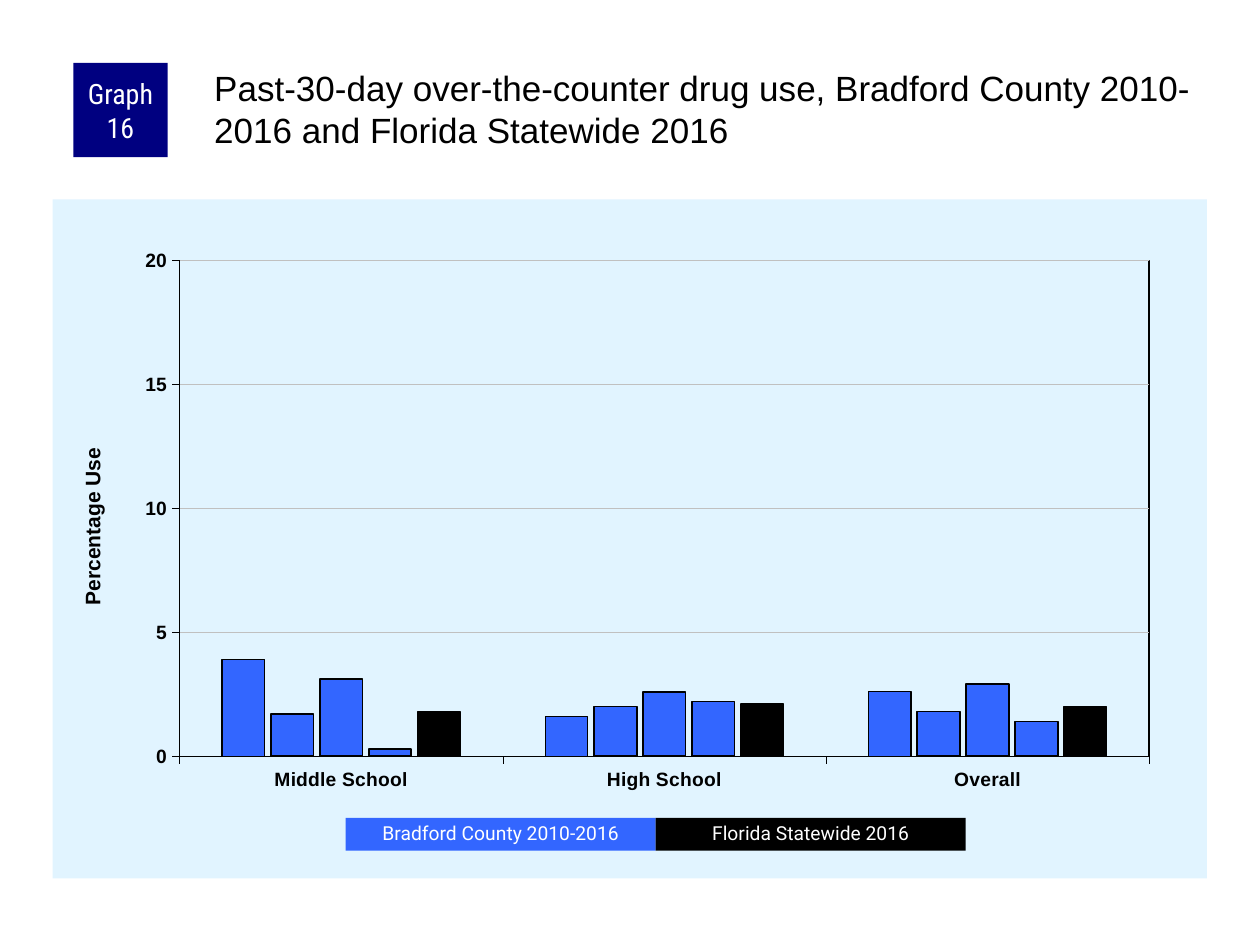
from pptx import Presentation
from pptx.chart.data import CategoryChartData
from pptx.dml.color import RGBColor
from pptx.enum.chart import XL_CHART_TYPE, XL_TICK_LABEL_POSITION, XL_TICK_MARK
from pptx.enum.shapes import MSO_SHAPE
from pptx.enum.text import MSO_ANCHOR, PP_ALIGN
from pptx.oxml import parse_xml
from pptx.oxml.ns import nsdecls, qn
from pptx.util import Cm, Pt

COLORS = {
    "ink": "000000",
    "paper": "FFFFFF",
    "navy": "000080",
    "blue": "3366FF",
    "panel": "E1F4FF",
    "grid": "C0C0C0",
}


class SlideBuilder:
    """Holds the style and the current page."""

    def __init__(self, page, font="Arial"):
        self.page = page
        self.font = font

    def color(self, name):
        return RGBColor.from_string(COLORS[name])

    def style_font(self, font, size, color, name=None, bold=False):
        font.name = name or self.font
        font.size = Pt(size)
        font.bold = bold
        font.color.rgb = self.color(color)

    def style_line(self, line, color, width):
        line.color.rgb = self.color(color)
        line.width = Pt(width)

    def set_text(self, shape, text, size, color, font=None, margins=None):
        frame = shape.text_frame
        frame.word_wrap = True
        if margins:
            (frame.margin_left, frame.margin_top,
             frame.margin_right, frame.margin_bottom) = map(Cm, margins)
        frame.text = text
        para = frame.paragraphs[0]
        self.style_font(para.runs[0].font, size, color, font)
        return para

    def label(self, place, text, fill, size, font, margins=None, spacing=None):
        box = self.page.shapes.add_shape(MSO_SHAPE.RECTANGLE, *map(Cm, place))
        box.shadow.inherit = False
        box.fill.solid()
        box.fill.fore_color.rgb = self.color(fill)
        box.line.fill.background()
        box.text_frame.vertical_anchor = MSO_ANCHOR.MIDDLE
        para = self.set_text(box, text, size, "paper", font, margins)
        para.alignment = PP_ALIGN.CENTER
        para.line_spacing = spacing

    def heading(self, place, text, size):
        box = self.page.shapes.add_textbox(*map(Cm, place))
        box.text_frame.vertical_anchor = MSO_ANCHOR.TOP
        self.set_text(box, text, size, "ink", margins=(0.08, 0.08, 0, 0))

    def layout(self, x, y, width=None, height=None):
        """Manual layout in fractions of the chart."""
        inner = '<c:layoutTarget val="inner"/>' if width else ""
        size = f'<c:w val="{width}"/><c:h val="{height}"/>' if width else ""
        return parse_xml(
            f'<c:layout {nsdecls("c")}><c:manualLayout>{inner}'
            '<c:xMode val="edge"/><c:yMode val="edge"/>'
            f'<c:x val="{x}"/><c:y val="{y}"/>{size}'
            '</c:manualLayout></c:layout>')

    def area(self, fill, line):
        """Fill and outline of a chart part; None leaves it empty."""
        def paint(name):
            if name is None:
                return "<a:noFill/>"
            return f'<a:solidFill><a:srgbClr val="{COLORS[name]}"/></a:solidFill>'
        return parse_xml(f'<c:spPr {nsdecls("c", "a")}>{paint(fill)}'
                         f'<a:ln w="9525">{paint(line)}</a:ln></c:spPr>')

    def replace_layout(self, parent, layout, index):
        for old in parent.findall(qn("c:layout")):
            parent.remove(old)
        parent.insert(index, layout)

    def style_axis(self, axis):
        axis.major_tick_mark = XL_TICK_MARK.OUTSIDE
        axis.minor_tick_mark = XL_TICK_MARK.NONE
        axis.tick_label_position = XL_TICK_LABEL_POSITION.LOW
        self.style_font(axis.tick_labels.font, 11, "ink", bold=True)
        self.style_line(axis.format.line, "ink", 0.25)

    def column_chart(self, place, categories, series, axis_title):
        data = CategoryChartData()
        data.categories = categories
        for name, values, _, _ in series:
            data.add_series(name, values)
        chart = self.page.shapes.add_chart(
            XL_CHART_TYPE.COLUMN_CLUSTERED, *map(Cm, place), data).chart
        chart.has_legend = False
        chart.has_title = False
        self.style_font(chart.font, 8, "ink")

        # Columns
        plot = chart.plots[0]
        plot.vary_by_categories = False
        plot.gap_width = 200
        plot.overlap = -15
        for column, (_, _, color, width) in zip(plot.series, series):
            column.invert_if_negative = False
            column.format.fill.solid()
            column.format.fill.fore_color.rgb = self.color(color)
            self.style_line(column.format.line, "ink", width)

        # Axes
        self.style_axis(chart.category_axis)
        value_axis = chart.value_axis
        self.style_axis(value_axis)
        value_axis.minimum_scale = 0
        value_axis.maximum_scale = 20
        value_axis.major_unit = 5
        value_axis.has_major_gridlines = True
        self.style_line(value_axis.major_gridlines.format.line, "grid", 0.25)
        title = value_axis.axis_title
        title.text_frame.text = axis_title
        span = title.text_frame.paragraphs[0].runs[0]
        self.style_font(span.font, 12, "ink", bold=True)
        body = title._element.find(".//" + qn("a:bodyPr"))
        body.set("rot", "-5400000")
        body.set("vert", "horz")
        self.replace_layout(title._element, self.layout(0.02, 0.36), 1)

        # Plot frame and panel behind it
        root = chart._chartSpace
        plot_area = root.chart.plotArea
        self.replace_layout(plot_area, self.layout(0.11, 0.09, 0.84, 0.73), 0)
        plot_area.append(self.area(None, "ink"))
        root.chart.addnext(self.area("panel", None))


def main():
    deck = Presentation()
    deck.slide_width, deck.slide_height = Cm(25.4), Cm(19.05)
    builder = SlideBuilder(deck.slides.add_slide(deck.slide_layouts[6]))

    # Chart: four county surveys, then the state
    county = [(3.9, 1.6, 2.6), (1.7, 2, 1.8), (3.1, 2.6, 2.9), (0.3, 2.2, 1.4)]
    state = (1.8, 2.1, 2)
    series = [(f"Series {number}", values,
               "ink" if values is state else "blue",
               0.75 if number == 1 else 1)
              for number, values in enumerate(county + [state], 1)]
    builder.column_chart((1.06, 4.02, 23.27, 13.69),
                         ["Middle School", "High School", "Overall"],
                         series, "Percentage Use")

    # Graph number and heading
    builder.label((1.48, 1.27, 1.9, 1.9), "Graph 16", "navy", 16,
                  "Roboto Condensed", margins=(0.13, 0, 0.13, 0))
    builder.heading((4.24, 1.27, 20.11, 2.12),
                    "Past-30-day over-the-counter drug use, Bradford County "
                    "2010-2016 and Florida Statewide 2016", 20)

    # Key
    key_width = 6.25
    for index, (text, fill) in enumerate([("Bradford County 2010-2016", "blue"),
                                          ("Florida Statewide 2016", "ink")]):
        builder.label((6.97 + index * key_width, 16.49, key_width, 0.66),
                      text, fill, 11, "Roboto", spacing=0.9)

    deck.save("out.pptx")


if __name__ == "__main__":
    main()
